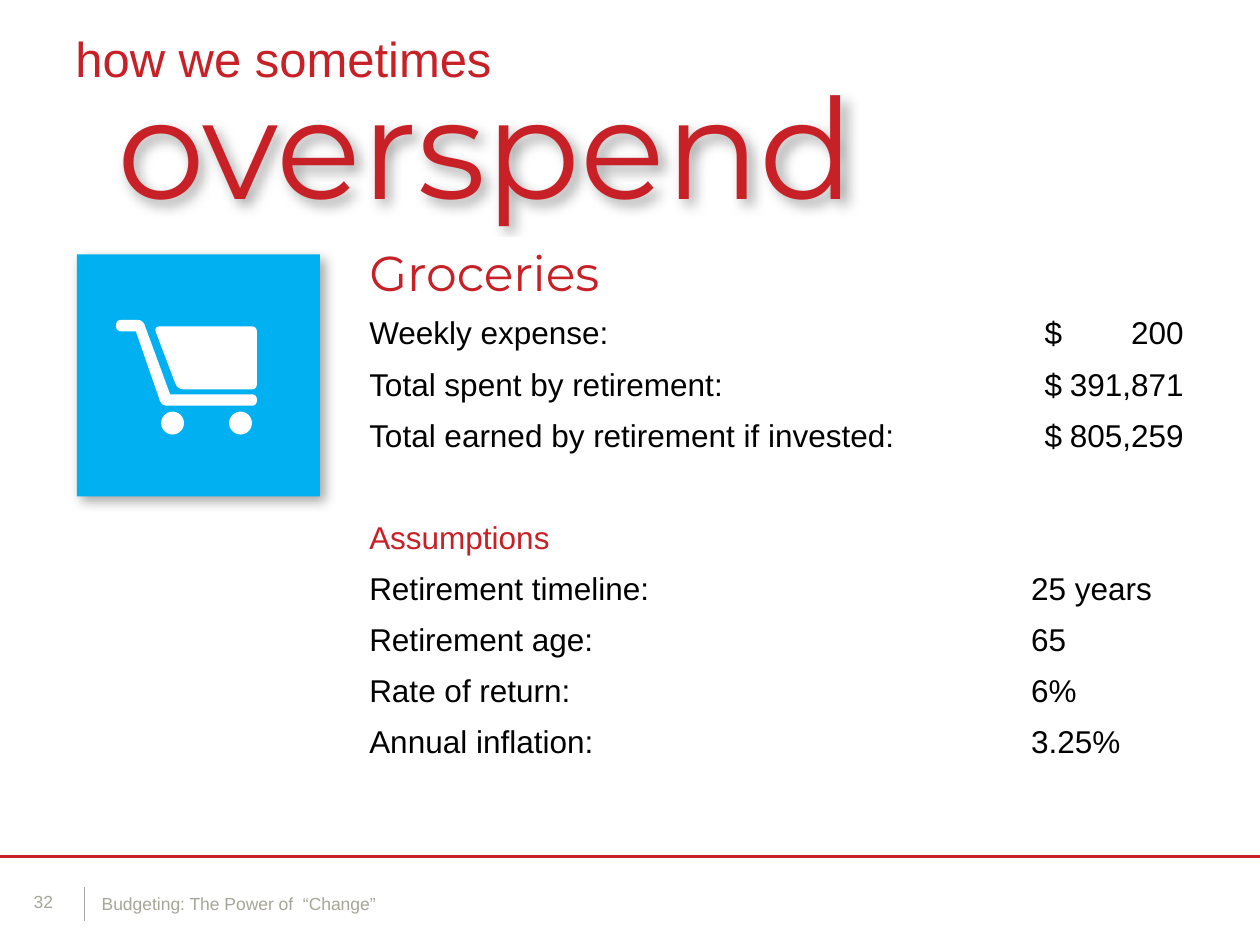
from math import cos, pi, sin

from lxml.etree import SubElement
from pptx import Presentation
from pptx.dml.color import RGBColor
from pptx.enum.shapes import MSO_CONNECTOR, MSO_SHAPE
from pptx.enum.text import MSO_ANCHOR, MSO_AUTO_SIZE, PP_ALIGN
from pptx.oxml.ns import qn
from pptx.util import Cm, Pt

COLORS = {name: RGBColor.from_string(value) for name, value in {
    "red": "C72127", "blue": "00B0F0", "white": "FFFFFF",
    "black": "000000", "footer": "A6A698", "divider": "A6A6A6"}.items()}


def write(frame, text, size, color, font="Arial"):
    """Set one left-aligned line of text and format it."""
    frame.text = text
    para = frame.paragraphs[0]
    para.alignment = PP_ALIGN.LEFT
    para.font.size = Pt(size)
    para.font.name = font
    para.font.color.rgb = COLORS[color]
    return para


def rounded(corners):
    """Turn (x, y, radius) corners into an outline with rounded corners."""
    outline = []
    for i, (x, y, radius) in enumerate(corners):
        ends = []
        for nx, ny, _ in (corners[i - 1], corners[(i + 1) % len(corners)]):
            share = radius / ((nx - x) ** 2 + (ny - y) ** 2) ** 0.5
            ends.append((x + (nx - x) * share, y + (ny - y) * share))
        (ax, ay), (bx, by) = ends
        for t in (0, 0.25, 0.5, 0.75, 1):
            a, m, b = (1 - t) ** 2, 2 * t * (1 - t), t ** 2
            outline.append((a * ax + m * x + b * bx, a * ay + m * y + b * by))
    return outline


deck = Presentation()
deck.slide_width, deck.slide_height = Cm(25.4), Cm(19.05)
page = deck.slides.add_slide(deck.slide_layouts[5])
shapes = page.shapes

# Footer rules
for x1, y1, x2, y2, color, width in (
        (1.7, 17.88, 1.7, 18.57, "divider", 0.25),
        (0, 17.27, 25.4, 17.27, "red", 1.5)):
    rule = shapes.add_connector(MSO_CONNECTOR.STRAIGHT, Cm(x1), Cm(y1), Cm(x2), Cm(y2))
    rule.line.color.rgb = COLORS[color]
    rule.line.width = Pt(width)
    SubElement(rule._element.spPr, qn("a:effectLst"))

# Title
title = shapes.title
title.left, title.top, title.width, title.height = Cm(2.11), Cm(1.07), Cm(17.55), Cm(3.68)
title.text_frame.auto_size = MSO_AUTO_SIZE.NONE
title.text_frame.vertical_anchor = MSO_ANCHOR.TOP
write(title.text_frame, "overspend", 80, "red", "Montserrat")

# Lead-in line, page number and footer text
for text, left, top, width, height, size, color in (
        ("how we sometimes", 1.27, 0.46, 15.88, 1.45, 28, "red"),
        ("32", 0.43, 17.83, 0.99, 0.69, 10, "footer"),
        ("Budgeting: The Power of  “Change”", 1.8, 17.88, 10.77, 0.69, 10, "footer")):
    box = shapes.add_textbox(Cm(left), Cm(top), Cm(width), Cm(height))
    box.text_frame.word_wrap = True
    write(box.text_frame, text, size, color)

# Icon tile
tile = shapes.add_shape(MSO_SHAPE.RECTANGLE, Cm(1.55), Cm(5.13), Cm(4.9), Cm(4.88))
tile.fill.solid()
tile.fill.fore_color.rgb = COLORS["blue"]
tile.line.fill.background()

# Soft shadow on the tile and the title
for shape in (tile, title):
    shape.shadow.inherit = False
    effects = shape._element.spPr.find(qn("a:effectLst"))
    shadow = SubElement(effects, qn("a:outerShdw"), blurRad=str(Pt(7.2)), dist=str(Pt(3.8)),
                        dir="2700000", algn="tl", rotWithShape="0")
    shade = SubElement(shadow, qn("a:srgbClr"), val=str(COLORS["black"]))
    SubElement(shade, qn("a:alpha"), val="35000")

# Shopping cart: wheels, basket and frame in one outline
contours = [[(x + 0.23 * cos(pi * i / 16), 8.53 + 0.23 * sin(pi * i / 16)) for i in range(32)]
            for x in (4.85, 3.48)]
contours.append(rounded([(3.1, 6.58, 0.13), (5.18, 6.58, 0.11),
                         (5.18, 7.85, 0.11), (3.58, 7.85, 0.13)]))
contours.append(rounded([(2.34, 6.45, 0.11), (2.88, 6.45, 0.11), (3.43, 7.95, 0),
                         (5.18, 7.95, 0.11), (5.18, 8.18, 0.11), (3.26, 8.18, 0.11),
                         (2.74, 6.68, 0), (2.34, 6.68, 0.11)]))
contours = [[(Cm(x), Cm(y)) for x, y in contour] for contour in contours]
builder = shapes.build_freeform(*contours[0][0])
builder.add_line_segments(contours[0][1:])
for contour in contours[1:]:
    builder.move_to(*contour[0])
    builder.add_line_segments(contour[1:])
cart = builder.convert_to_shape()
cart.shadow.inherit = False
cart.fill.solid()
cart.fill.fore_color.rgb = COLORS["white"]
cart.line.fill.background()

# Figures table; rows without a value span both columns
rows = [("Groceries", None),
        ("Weekly expense:", "$\t200"),
        ("Total spent by retirement:", "$\t391,871"),
        ("Total earned by retirement if invested:", "$\t805,259"),
        ("", None),
        ("Assumptions", None),
        ("Retirement timeline:", "25 years"),
        ("Retirement age:", "65"),
        ("Rate of return:", "6%"),
        ("Annual inflation:", "3.25%")]
table = shapes.add_table(len(rows), 2, Cm(7.19), Cm(4.8), Cm(16.95), Cm(10.72)).table
table.first_row = table.horz_banding = False
table.columns[0].width, table.columns[1].width = Cm(13.34), Cm(3.61)
for i, (label, value) in enumerate(rows):
    table.rows[i].height = Cm(1.45 if i == 0 else 1.03)
    label_cell, value_cell = table.cell(i, 0), table.cell(i, 1)
    for cell in (label_cell, value_cell):
        cell.fill.solid()
        cell.fill.fore_color.rgb = COLORS["white"]
    if value is None:
        label_cell.merge(value_cell)
    else:
        para = write(value_cell.text_frame, value, 18, "black")
        if "\t" in value:
            value_cell.margin_left = Cm(0.53)
            properties = para._p.get_or_add_pPr()
            tabs = SubElement(properties, qn("a:tabLst"))
            SubElement(tabs, qn("a:tab"), pos=str(Cm(2.8)), algn="r")
            properties.insert(0, tabs)
    if i == 0:
        write(label_cell.text_frame, label, 28, "red", "Montserrat")
    else:
        write(label_cell.text_frame, label, 18, "red" if value is None else "black")

deck.save("out.pptx")
